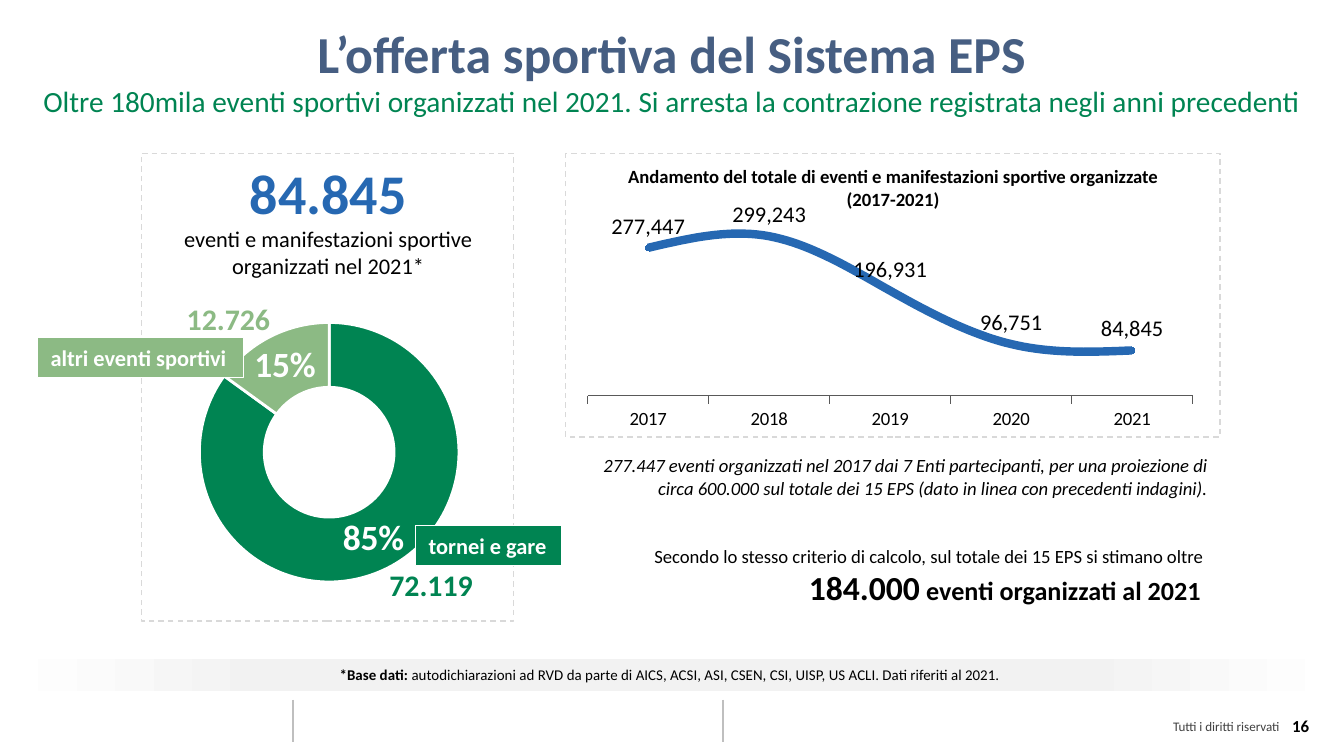
import pptx
import pptx.chart.data
import pptx.dml.color
import pptx.enum.chart
import pptx.enum.dml
import pptx.enum.shapes
import pptx.enum.text
import pptx.oxml
import pptx.oxml.ns
import pptx.util
from lxml import etree

Cm = pptx.util.Cm
Pt = pptx.util.Pt
RGB = pptx.dml.color.RGBColor
Align = pptx.enum.text.PP_ALIGN
Kind = pptx.enum.chart.XL_CHART_TYPE
qn = pptx.oxml.ns.qn

NAVY = RGB(0x46, 0x5E, 0x82)
GREEN = RGB(0x00, 0x84, 0x52)
SAGE = RGB(0x8C, 0xBA, 0x84)
BLUE = RGB(0x26, 0x68, 0xB2)
BLACK = RGB(0, 0, 0)
WHITE = RGB(0xFF, 0xFF, 0xFF)
PALE = RGB(0xF2, 0xF2, 0xF2)
LIGHT = RGB(0xD9, 0xD9, 0xD9)
GREY = RGB(0xBF, 0xBF, 0xBF)
DARK = RGB(0x40, 0x40, 0x40)
AXIS = RGB(0x59, 0x59, 0x59)
FONT = "Calibri"


def style(font, size, color=BLACK, bold=False, italic=False):
    font.name, font.size, font.bold, font.italic = FONT, Pt(size), bold, italic
    font.color.rgb = color


def write(shape, text, align=Align.LEFT, gap=0, join=False, **fmt):
    frame = shape.text_frame
    para = frame.paragraphs[-1]
    if para.runs and not join:
        para = frame.add_paragraph()
    if not join:
        para.alignment = align
        if gap:
            para.space_before = Pt(gap)
    run = para.add_run()
    run.text = text
    style(run.font, **fmt)


def place(box, left, top, wide, high):
    return Cm(box[0] + left), Cm(box[1] + top), Cm(wide), Cm(high)


def label(slide, spot, wrap=True):
    shape = slide.shapes.add_textbox(*spot)
    shape.text_frame.word_wrap = wrap
    return shape


def block(slide, spot, fill=None, line=None, dash=False):
    shape = slide.shapes.add_shape(pptx.enum.shapes.MSO_SHAPE.RECTANGLE, *spot)
    shape.shadow.inherit = False
    if fill is None:
        shape.fill.background()
    else:
        shape.fill.solid()
        shape.fill.fore_color.rgb = fill
    if line is None:
        shape.line.fill.background()
    else:
        shape.line.color.rgb = line
        shape.line.width = Pt(0.75)
    if dash:
        shape.line.dash_style = pptx.enum.dml.MSO_LINE.DASH
    return shape


def graph(slide, spot, kind, cats, vals, form, area):
    data = pptx.chart.data.CategoryChartData(number_format=form)
    data.categories = cats
    data.add_series("Series 1", vals)
    chart = slide.shapes.add_chart(kind, *spot, data).chart
    chart.has_legend = chart.has_title = False
    style(chart.font, 10)
    plot = chart.plots[0]
    plot.vary_by_categories = kind == Kind.DOUGHNUT
    plot.has_data_labels = True
    marks = plot.data_labels
    marks.show_value = True
    marks.show_percentage = False
    marks.number_format = form
    marks.number_format_is_linked = False
    room = chart.element.find(".//" + qn("c:plotArea"))
    for old in room.findall(qn("c:layout")):
        room.remove(old)
    layout = etree.Element(qn("c:layout"))
    manual = etree.SubElement(layout, qn("c:manualLayout"))
    rules = [("layoutTarget", "inner"), ("xMode", "edge"), ("yMode", "edge")]
    for name, value in rules + list(zip("xywh", area)):
        etree.SubElement(manual, qn("c:" + name)).set("val", str(value))
    room.insert(0, layout)
    return chart


def header(slide, box):
    shape = label(slide, place(box, 0, 0, *box[2:]))
    write(shape, "L’offerta sportiva del Sistema EPS", Align.CENTER,
          size=27.8, color=NAVY, bold=True)
    write(shape, "Oltre 180mila eventi sportivi organizzati nel 2021. "
          "Si arresta la contrazione registrata negli anni precedenti",
          Align.CENTER, size=15.7, color=GREEN)


def offer(slide, box):
    chart = graph(slide, place(box, -0.71, 3.07, 8.61, 5.11), Kind.DOUGHNUT,
                  ["1", "2"], [0.85, 0.15], "0%", (0.21, 0.02, 0.57, 0.97))
    chart.element.find(".//" + qn("c:holeSize")).set("val", "60")
    plot = chart.plots[0]
    style(plot.data_labels.font, 19, WHITE, True)
    for i, color in enumerate((GREEN, SAGE)):
        look = plot.series[0].points[i].format
        look.fill.solid()
        look.fill.fore_color.rgb = color
        look.line.color.rgb = WHITE
        look.line.width = Pt(1.5)
    total = label(slide, place(box, 0.45, -0.03, 6.17, 2.57), False)
    write(total, "84.845", Align.CENTER, size=30, color=BLUE, bold=True)
    for line in ("eventi e manifestazioni sportive", "organizzati nel 2021*"):
        write(total, line, Align.CENTER, size=12)
    block(slide, place(box, 0, 0, *box[2:]), line=LIGHT, dash=True)
    tags = [("tornei e gare", (5.18, 7.03, 2.77), "72.119", (4.44, 7.69), GREEN),
            ("altri eventi sportivi", (-1.96, 3.48, 3.89), "12.726", (0.61, 2.66), SAGE)]
    for name, spot, count, point, color in tags:
        tag = block(slide, place(box, *spot, 0.76), color, WHITE)
        tag.text_frame.word_wrap = False
        write(tag, name, size=12, color=WHITE, bold=True)
        sum_box = label(slide, place(box, *point, 2.11, 0.94), False)
        write(sum_box, count, size=16, color=color, bold=True)


def trend(slide, box):
    block(slide, place(box, 0, 0, *box[2:]), line=LIGHT, dash=True)
    chart = graph(slide, place(box, 0.18, 0.91, 11.91, 4.42), Kind.LINE_MARKERS,
                  [str(year) for year in range(2017, 2022)],
                  [277447, 299243, 196931, 96751, 84845], "#,##0",
                  (0.02, 0.03, 0.96, 0.8))
    series = chart.plots[0].series[0]
    series.smooth = True
    series.format.line.color.rgb = BLUE
    series.format.line.width = Pt(4.5)
    series.marker.style = pptx.enum.chart.XL_MARKER_STYLE.CIRCLE
    series.marker.size = 3
    series.marker.format.fill.solid()
    series.marker.format.fill.fore_color.rgb = BLUE
    series.marker.format.line.color.rgb = BLUE
    marks = chart.plots[0].data_labels
    marks.position = pptx.enum.chart.XL_LABEL_POSITION.ABOVE
    style(marks.font, 12)
    scale = chart.value_axis
    scale.minimum_scale, scale.maximum_scale = 0, 350000
    scale.has_major_gridlines = False
    scale.visible = False
    years = chart.category_axis
    years.major_tick_mark = pptx.enum.chart.XL_TICK_MARK.OUTSIDE
    years.format.line.color.rgb = AXIS
    years.format.line.width = Pt(0.75)
    style(years.tick_labels.font, 10)
    title = label(slide, place(box, 0, 0.1, box[2], 1.12))
    for line in ("Andamento del totale di eventi e manifestazioni sportive organizzate",
                 "(2017-2021)"):
        write(title, line, Align.CENTER, size=10, bold=True)


def notes(slide, box):
    shape = label(slide, place(box, 0, 0, *box[2:]))
    write(shape, "277.447 eventi organizzati nel 2017 dai 7 Enti partecipanti, "
          "per una proiezione di circa 600.000 sul totale dei 15 EPS "
          "(dato in linea con precedenti indagini).",
          Align.RIGHT, size=10, italic=True)
    write(shape, "Secondo lo stesso criterio di calcolo, sul totale dei 15 EPS "
          "si stimano oltre ", Align.RIGHT, gap=24.4, size=10)
    write(shape, "184.000", Align.RIGHT, size=18, bold=True)
    write(shape, " eventi organizzati al 2021 ", join=True, size=14, bold=True)


def source(slide, box):
    bar = block(slide, place(box, 0, 0, *box[2:]))
    bar.fill.gradient()
    bar.fill.gradient_angle = 0
    stops = bar.element.spPr.find(".//" + qn("a:gsLst"))
    for old in list(stops):
        stops.remove(old)
    for part, color in ((0, WHITE), (20, PALE), (80, PALE), (100, WHITE)):
        stop = etree.SubElement(stops, qn("a:gs"), pos=str(part * 1000))
        etree.SubElement(stop, qn("a:srgbClr"), val=str(color))
    write(bar, "*Base dati: ", Align.CENTER, size=8, bold=True)
    write(bar, "autodichiarazioni ad RVD da parte di AICS, ACSI, ASI, CSEN, CSI, "
          "UISP, US ACLI. Dati riferiti al 2021. ", join=True, size=8)


def footer(slide, box):
    for left in (5.54, 13.67):
        x, top, wide, high = place(box, left, 0, 0, 0.79)
        rule = slide.shapes.add_connector(
            pptx.enum.shapes.MSO_CONNECTOR.STRAIGHT, x, top, x + wide, top + high)
        rule.line.color.rgb = GREY
        rule.line.width = Pt(1)
        etree.SubElement(rule.element.spPr, qn("a:effectLst"))
    rights = label(slide, place(box, 19.53, 0.26, 4.83, 0.48))
    frame = rights.text_frame
    frame.margin_left = frame.margin_right = Cm(0.18)
    frame.margin_top = frame.margin_bottom = Cm(0.1)
    write(rights, "Tutti i diritti riservati", Align.RIGHT, size=7, color=DARK)
    page = label(slide, place(box, 23.67, 0.18, 1.32, 0.76))
    write(page, "16", Align.RIGHT, size=9, bold=True)


def main():
    deck = pptx.Presentation()
    deck.slide_width, deck.slide_height = Cm(25.4), Cm(14.29)
    slide = deck.slides.add_slide(deck.slide_layouts[6])
    footer(slide, (0, 13.23, 25.4, 1.06))
    header(slide, (0, 0.28, 25.4, 2.46))
    offer(slide, (2.67, 2.9, 7.04, 8.84))
    source(slide, (0, 12.45, 25.4, 0.61))
    trend(slide, (10.69, 2.9, 12.37, 5.36))
    notes(slide, (10.69, 8.46, 12.37, 3.18))
    deck.save("out.pptx")


if __name__ == "__main__":
    main()
